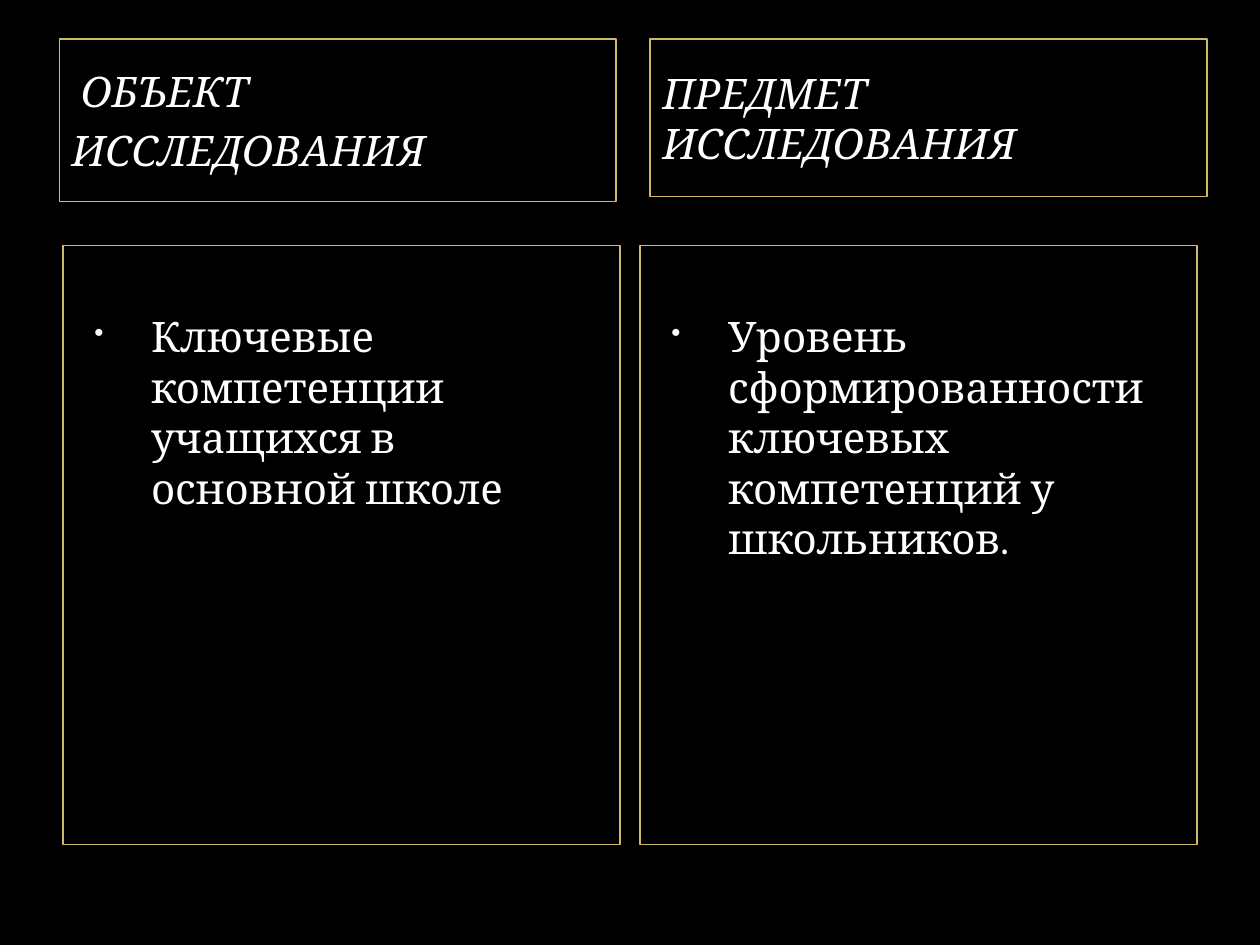
from dataclasses import dataclass

from lxml import etree
from pptx import Presentation
from pptx import util as u
from pptx.dml import color
from pptx.enum import shapes, text
from pptx.oxml import ns


@dataclass(frozen=True)
class Theme:
    background: str = "000000"
    border: str = "CEB966"
    ink: str = "FFFFFF"
    bullet: str = "F9F9F9"
    font: str = "Cambria"
    size: float = 24
    border_width: float = 0.75
    paragraph_gap: float = 4.8


THEME = Theme()
COLUMN_WIDTH = 318.24


def rgb(value):
    return color.RGBColor.from_string(value)


def add_frame(slide, box, lines, anchor, italic=False):
    shape = slide.shapes.add_shape(
        shapes.MSO_SHAPE.RECTANGLE, *(u.Pt(length) for length in box))
    shape.shadow.inherit = False
    shape.fill.background()
    shape.line.color.rgb = rgb(THEME.border)
    shape.line.width = u.Pt(THEME.border_width)
    frame = shape.text_frame
    frame.word_wrap = True
    frame.vertical_anchor = anchor
    frame.text = "\n".join(lines)
    for paragraph in frame.paragraphs:
        paragraph.alignment = text.PP_ALIGN.LEFT
        paragraph.space_before = u.Pt(THEME.paragraph_gap)
        for run in paragraph.runs:
            run.font.name = THEME.font
            run.font.size = u.Pt(THEME.size)
            run.font.italic = italic
            run.font.color.rgb = rgb(THEME.ink)
    return frame


def add_bullet(paragraph, margin, hanging):
    properties = paragraph._p.get_or_add_pPr()
    properties.set("marL", str(u.Pt(margin)))
    properties.set("indent", str(-u.Pt(hanging)))
    bullet_color = etree.SubElement(properties, ns.qn("a:buClr"))
    etree.SubElement(bullet_color, ns.qn("a:srgbClr"), val=THEME.bullet)
    etree.SubElement(properties, ns.qn("a:buSzPct"), val="65000")
    etree.SubElement(properties, ns.qn("a:buChar"), char="•")


def add_heading(slide, box, lines):
    add_frame(slide, box, lines, text.MSO_ANCHOR.MIDDLE, italic=True)


def add_statement(slide, box, statement):
    frame = add_frame(slide, box, [statement], text.MSO_ANCHOR.TOP)
    frame.margin_top = u.Pt(37.2)
    add_bullet(frame.paragraphs[0], margin=43.2, hanging=32.4)


def build_research_slide(presentation):
    slide = presentation.slides.add_slide(presentation.slide_layouts[6])
    slide.background.fill.solid()
    slide.background.fill.fore_color.rgb = rgb(THEME.background)
    add_heading(slide, (33.84, 22.32, COLUMN_WIDTH, 92.88),
                [" ОБЪЕКТ", "ИССЛЕДОВАНИЯ"])
    add_heading(slide, (371.52, 22.32, COLUMN_WIDTH, 90),
                ["ПРЕДМЕТ ИССЛЕДОВАНИЯ"])
    add_statement(slide, (36, 140.4, COLUMN_WIDTH, 342),
                  "Ключевые компетенции учащихся в основной школе")
    add_statement(slide, (365.76, 140.4, COLUMN_WIDTH, 342),
                  "Уровень сформированности ключевых компетенций у школьников.")


def main():
    presentation = Presentation()
    presentation.slide_width = u.Pt(720)
    presentation.slide_height = u.Pt(540)
    build_research_slide(presentation)
    presentation.save("out.pptx")


if __name__ == "__main__":
    main()
